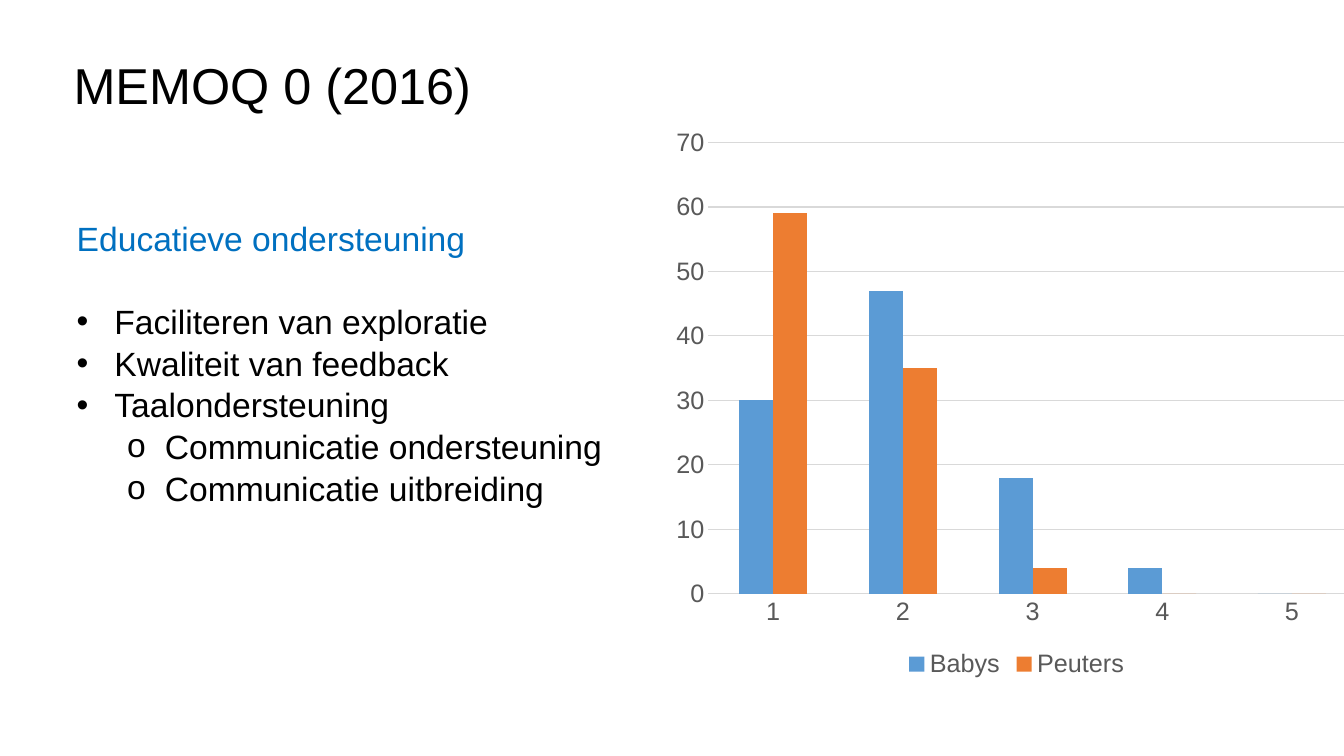
from lxml import etree
from pptx import Presentation
from pptx import util as u
from pptx.chart.data import CategoryChartData
from pptx.dml.color import RGBColor
from pptx.enum import chart as ch, text
from pptx.oxml.ns import qn

BLACK = RGBColor(0x00, 0x00, 0x00)
HEADING = RGBColor(0x00, 0x70, 0xC0)
GREY = RGBColor(0x59, 0x59, 0x59)
GRID = RGBColor(0xD9, 0xD9, 0xD9)
BLUE = RGBColor(0x5B, 0x9B, 0xD5)
ORANGE = RGBColor(0xED, 0x7D, 0x31)

HANGING = 0.95
LEVELS = [("•", 0.95), ("o", 2.22)]


def apply(obj, values):
    for name, value in values.items():
        setattr(obj, name, value)


class SlideBuilder:
    def __init__(self, prs, font="Arial"):
        self.font = font
        self.s = prs.slides.add_slide(prs.slide_layouts[1])

    def set_font(self, font, size, color):
        apply(font, {"name": self.font, "size": u.Pt(size), "bold": False})
        font.color.rgb = color

    def place(self, sp, left, top, width, height, anchor):
        apply(sp, {"left": u.Cm(left), "top": u.Cm(top),
                   "width": u.Cm(width), "height": u.Cm(height)})
        tf = sp.text_frame
        apply(tf, {"word_wrap": True, "vertical_anchor": anchor,
                   "auto_size": text.MSO_AUTO_SIZE.NONE})
        return tf

    def title(self, words, *box):
        tf = self.place(self.s.shapes.title, *box, text.MSO_ANCHOR.TOP)
        p = tf.paragraphs[0]
        p.alignment = text.PP_ALIGN.LEFT
        r = p.add_run()
        r.text = words
        self.set_font(r.font, 36, BLACK)

    def body(self, heading, items, *box):
        tf = self.place(self.s.placeholders[1], *box, text.MSO_ANCHOR.TOP)
        tf.margin_top = u.Cm(1.14)
        self.paragraph(tf.paragraphs[0], heading, HEADING, after=28.8)
        for level, words in items:
            self.paragraph(tf.add_paragraph(), words, BLACK, level)

    def paragraph(self, p, words, color, level=None, after=0):
        """Write one line; a level of None means no bullet."""
        apply(p, {"level": level or 0, "line_spacing": 1.04,
                  "space_before": u.Pt(0), "space_after": u.Pt(after)})
        r = p.add_run()
        r.text = words
        self.set_font(r.font, 24, color)
        pPr = p._p.get_or_add_pPr()
        if level is None:
            margin, indent = 0, 0
            etree.SubElement(pPr, qn("a:buNone"))
        else:
            bullet, margin = LEVELS[level]
            indent = -HANGING
            etree.SubElement(pPr, qn("a:buFont"), typeface=self.font)
            etree.SubElement(pPr, qn("a:buChar"), char=bullet)
        pPr.set("marL", str(u.Cm(margin)))
        pPr.set("indent", str(u.Cm(indent)))

    def column_chart(self, categories, series, *box):
        data = CategoryChartData()
        data.categories = categories
        for name, values, _ in series:
            data.add_series(name, values)
        chart = self.s.shapes.add_chart(
            ch.XL_CHART_TYPE.COLUMN_CLUSTERED, *map(u.Cm, box), data).chart
        apply(chart, {"has_title": False, "has_legend": True})
        apply(chart.legend, {"position": ch.XL_LEGEND_POSITION.BOTTOM,
                             "include_in_layout": False})
        self.set_font(chart.font, 18, BLACK)
        self.set_font(chart.legend.font, 18, GREY)

        plot = chart.plots[0]
        apply(plot, {"gap_width": 182, "overlap": 0, "vary_by_categories": False})
        for bars, (_, _, color) in zip(plot.series, series):
            bars.format.fill.solid()
            bars.format.fill.fore_color.rgb = color

        for axis in (chart.category_axis, chart.value_axis):
            apply(axis, {"major_tick_mark": ch.XL_TICK_MARK.NONE,
                         "minor_tick_mark": ch.XL_TICK_MARK.NONE})
            self.set_font(axis.tick_labels.font, 18, GREY)
        apply(chart.value_axis, {"minimum_scale": 0, "maximum_scale": 70,
                                 "major_unit": 10, "has_major_gridlines": True})
        chart.value_axis.format.line.fill.background()
        for part in (chart.category_axis, chart.value_axis.major_gridlines):
            part.format.line.color.rgb = GRID
            part.format.line.width = u.Pt(0.75)


def main():
    prs = Presentation()
    apply(prs, {"slide_width": u.Cm(33.87), "slide_height": u.Cm(19.05)})
    slide = SlideBuilder(prs)
    slide.title("MEMOQ 0 (2016)", 1.6, 1.24, 14.22, 1.8)
    slide.body("Educatieve ondersteuning", [
        (0, "Faciliteren van exploratie"),
        (0, "Kwaliteit van feedback"),
        (0, "Taalondersteuning"),
        (1, "Communicatie ondersteuning"),
        (1, "Communicatie uitbreiding"),
    ], 1.68, 4.32, 14.15, 9.25)
    slide.column_chart(["1", "2", "3", "4", "5"], [
        ("Babys", [30, 47, 18, 4, 0], BLUE),
        ("Peuters", [59, 35, 4, 0, 0], ORANGE),
    ], 16.69, 2.95, 17.86, 14.27)
    prs.save("out.pptx")


if __name__ == "__main__":
    main()
